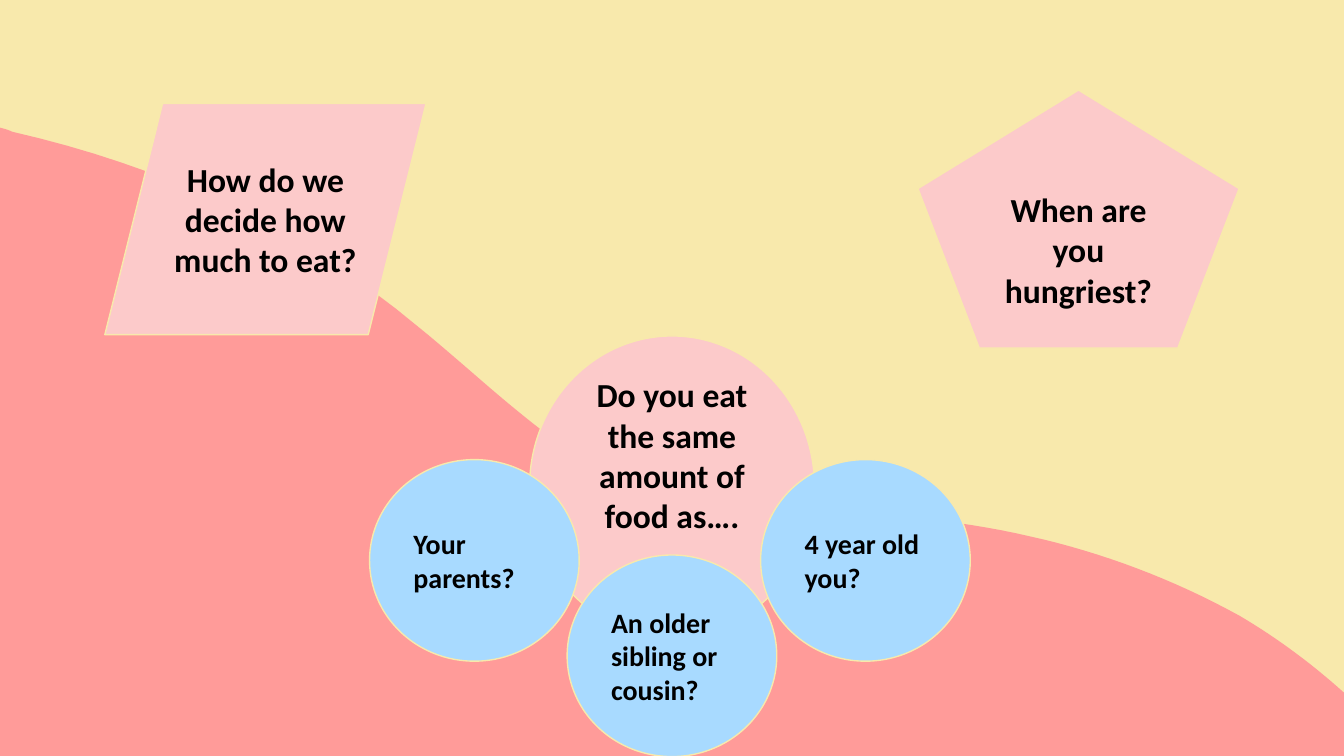
from pptx import Presentation
from pptx.dml.color import RGBColor
from pptx.enum.shapes import MSO_SHAPE as SHAPE
from pptx.enum.text import MSO_ANCHOR as ANCHOR, PP_ALIGN as ALIGN
from pptx.util import Inches, Pt

CREAM, CORAL, PINK, BLUE = "F8E9AC", "FF9B99", "FCCACA", "A8DAFF"


def paint(fill, color):
    fill.solid()
    fill.fore_color.rgb = RGBColor.from_string(color)


def add_bubble(kind, box, text, color, size, align, bottom=0.1):
    sp = s.shapes.add_shape(kind, *[Inches(v) for v in box])
    sp.shadow.inherit = False
    paint(sp.fill, color)
    paint(sp.line.fill, CREAM)
    sp.line.width = Pt(0.75)
    tf = sp.text_frame
    tf.word_wrap = True
    tf.vertical_anchor = ANCHOR.MIDDLE
    tf.margin_left = tf.margin_right = tf.margin_top = Inches(0.1)
    tf.margin_bottom = Inches(bottom)
    p = tf.paragraphs[0]
    p.text = text
    p.alignment = align
    p.font.name = "Calibri"
    p.font.size = Pt(size)
    p.font.bold = True
    p.font.color.rgb = RGBColor.from_string("000000")


# Widescreen 16:9 slide
prs = Presentation()
prs.slide_width, prs.slide_height = Inches(10), Inches(10 * 9 / 16)
s = prs.slides.add_slide(prs.slide_layouts[6])
paint(s.background.fill, CREAM)

# Coral wave: cubic curves, each as two control points and an end point
start = (-0.04, 0.94)
curves = [
    ((0, 0.95), (0.05, 0.96), (0.09, 0.98)),
    ((1.19, 1.23), (2.24, 1.7), (3.11, 2.43)),
    ((3.53, 2.77), (3.92, 3.16), (4.39, 3.45)),
    ((4.86, 3.75), (5.41, 3.8), (5.96, 3.81)),
    ((6.53, 3.82), (7.1, 3.86), (7.66, 3.99)),
    ((8.2, 4.11), (8.73, 4.31), (9.22, 4.58)),
    ((9.51, 4.75), (9.79, 4.96), (10.04, 5.19)),
]
steps = 16
points = [start]
for c1, c2, end in curves:
    p0 = points[-1]
    for i in range(1, steps + 1):
        t = i / steps
        u = 1 - t
        points.append(tuple(
            u**3 * a + 3 * u * u * t * b + 3 * u * t * t * c + t**3 * d
            for a, b, c, d in zip(p0, c1, c2, end)))
points += [(10.04, 6.09), (-0.04, 6.09)]
fb = s.shapes.build_freeform(Inches(start[0]), Inches(start[1]))
fb.add_line_segments([(Inches(x), Inches(y)) for x, y in points[1:]], close=True)
wave = fb.convert_to_shape()
wave.shadow.inherit = False
paint(wave.fill, CORAL)
wave.line.fill.background()

# Main questions; the circle keeps room below its text for the answers
questions = [
    (SHAPE.PARALLELOGRAM, (0.78, 0.77, 2.39, 1.72), "How do we decide how much to eat?", 0.1),
    (SHAPE.REGULAR_PENTAGON, (6.83, 0.67, 2.39, 1.92), "When are you hungriest?", 0.1),
    (SHAPE.OVAL, (3.94, 2.5, 2.12, 2.24), "Do you eat the same amount of food as….", 0.57),
]
for kind, box, text, bottom in questions:
    add_bubble(kind, box, text, PINK, 18, ALIGN.CENTER, bottom)

# People to compare with
people = [
    (2.75, 3.42, "Your parents?"),
    (4.22, 4.13, "An older sibling or cousin?"),
    (5.66, 3.42, "4 year old you?"),
]
for x, y, text in people:
    add_bubble(SHAPE.OVAL, (x, y, 1.56, 1.5), text, BLUE, 15, ALIGN.LEFT)

prs.save("out.pptx")
